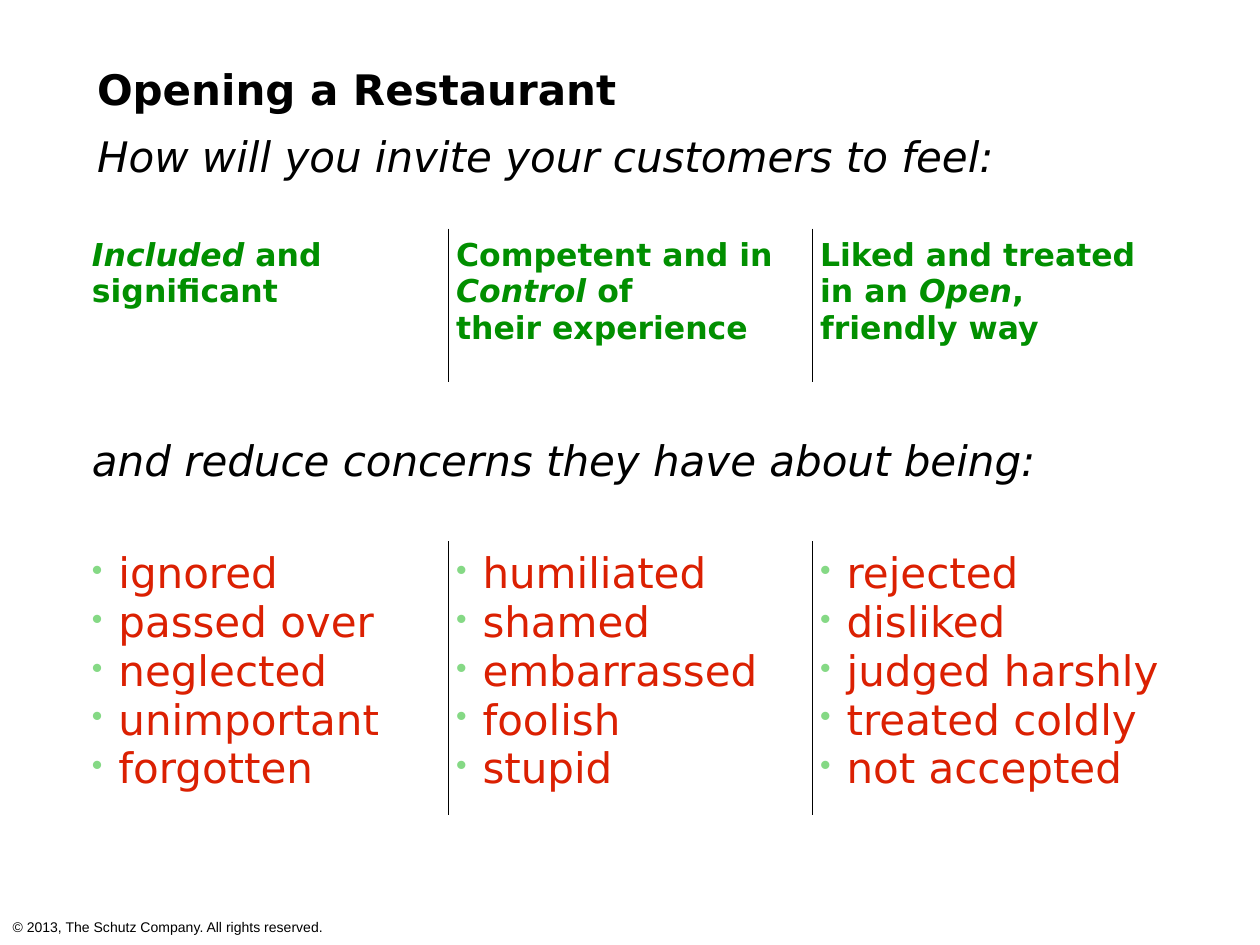
"""Build the slide on how a new restaurant invites its customers to feel."""
from dataclasses import dataclass

from lxml import etree
from pptx import Presentation
from pptx.dml.color import RGBColor
from pptx.enum.text import MSO_ANCHOR
from pptx.oxml.ns import qn
from pptx.util import Inches, Pt

TOP, MIDDLE = MSO_ANCHOR.TOP, MSO_ANCHOR.MIDDLE
BLACK, GREEN, RED, BULLET_GREEN = "000000", "018F00", "DB2002", "85D985"
INSET = 0.06
ROW_HEIGHTS = (1.35, 1.22, 1.26, 2.16)
COLUMN_WIDTH = 2.89

HEADING = {"size": Pt(24), "name": "DejaVu Sans", "bold": True}
QUESTION = {"size": Pt(24), "name": "DejaVu Sans", "bold": False, "italic": True}
FEELING = {"size": Pt(18), "name": "DejaVu Sans", "bold": True}
CONCERN = {"size": Pt(24), "name": "DejaVu Sans", "bold": False}
FOOTER = {"size": Pt(8), "name": "Arial"}


@dataclass
class Column:
    """One column: lines of (text, italic) runs, and the concerns below."""
    feeling: list[list[tuple[str, bool]]]
    concerns: list[str]


COLUMNS = [
    Column([[("Included", True), (" and significant", False)]],
           ["ignored", "passed over", "neglected", "unimportant", "forgotten"]),
    Column([[("Competent and in ", False), ("Control", True), (" of", False)],
            [("their experience", False)]],
           ["humiliated", "shamed", "embarrassed", "foolish", "stupid"]),
    Column([[("Liked and treated in an ", False), ("Open", True), (", friendly way", False)]],
           ["rejected", "disliked", "judged harshly", "treated coldly", "not accepted"]),
]


def color(value: str) -> RGBColor:
    """Turn a hex string into a colour."""
    return RGBColor.from_string(value)


def add_run(paragraph, text: str, format_values: dict, hex_color: str, **extra) -> None:
    """Add a formatted run to a paragraph."""
    run = paragraph.add_run()
    run.text = text
    for attribute, value in {**format_values, **extra}.items():
        setattr(run.font, attribute, value)
    run.font.color.rgb = color(hex_color)


def set_indent(paragraph, left: float, first: float = 0) -> None:
    """Set the left margin and first-line indent in inches."""
    properties = paragraph._p.get_or_add_pPr()
    properties.set("marL", str(Inches(left)))
    properties.set("indent", str(Inches(first)))


def add_bullet(paragraph) -> None:
    """Give a paragraph a small green bullet."""
    set_indent(paragraph, 0.21, -0.21)
    properties = paragraph._p.get_or_add_pPr()
    bullet_color = etree.SubElement(properties, qn("a:buClr"))
    etree.SubElement(bullet_color, qn("a:srgbClr"), val=BULLET_GREEN)
    etree.SubElement(properties, qn("a:buSzPct"), val="75000")
    etree.SubElement(properties, qn("a:buChar"), char="•")


def add_borders(cell, sides: list[str]) -> None:
    """Draw thin black borders on the named sides of a cell."""
    properties = cell._tc.get_or_add_tcPr()
    for side in sides:
        line = etree.SubElement(properties, qn(f"a:ln{side}"), w=str(Pt(1)))
        fill = etree.SubElement(line, qn("a:solidFill"))
        etree.SubElement(fill, qn("a:srgbClr"), val=BLACK)


def set_margins(target) -> None:
    """Apply the common inset to a cell or text frame."""
    for side in ("left", "right", "top", "bottom"):
        setattr(target, f"margin_{side}", Inches(INSET))


def get_paragraph(frame, index: int):
    """Return the first paragraph, or a new one after it."""
    return frame.add_paragraph() if index else frame.paragraphs[0]


def add_feelings_table(slide) -> None:
    """Add the table of feelings to invite and concerns to reduce."""
    table = slide.shapes.add_table(
        len(ROW_HEIGHTS), len(COLUMNS), Inches(0.67), Inches(0.47),
        Inches(COLUMN_WIDTH * len(COLUMNS)), Inches(sum(ROW_HEIGHTS))).table
    table.first_row = table.horz_banding = False
    for table_column in table.columns:
        table_column.width = Inches(COLUMN_WIDTH)
    last = len(COLUMNS) - 1
    for row_index, height in enumerate(ROW_HEIGHTS):
        table.rows[row_index].height = Inches(height)
        for column_index in range(len(COLUMNS)):
            cell = table.cell(row_index, column_index)
            set_margins(cell)
            cell.vertical_anchor = MIDDLE if row_index == 2 else TOP
            if row_index in (1, 3):
                add_borders(cell, ["L"] * (column_index > 0) + ["R"] * (column_index < last))
            cell.fill.background()
    for row_index in (0, 2):
        table.cell(row_index, 0).merge(table.cell(row_index, last))

    title_frame = table.cell(0, 0).text_frame
    titles = [("Opening a Restaurant", HEADING),
              ("How will you invite your customers to feel:", QUESTION)]
    for index, (text, format_values) in enumerate(titles):
        paragraph = get_paragraph(title_frame, index)
        set_indent(paragraph, 0.42, -0.38)
        if index:
            paragraph.space_before = Pt(10)
        add_run(paragraph, text, format_values, BLACK)
    add_run(table.cell(2, 0).text_frame.paragraphs[0],
            "and reduce concerns they have about being:", QUESTION, BLACK)

    for column_index, column in enumerate(COLUMNS):
        feeling_frame = table.cell(1, column_index).text_frame
        for index, runs in enumerate(column.feeling):
            paragraph = get_paragraph(feeling_frame, index)
            for text, italic in runs:
                add_run(paragraph, text, FEELING, GREEN, italic=italic)
        concern_frame = table.cell(3, column_index).text_frame
        for index, concern in enumerate(column.concerns):
            paragraph = get_paragraph(concern_frame, index)
            add_bullet(paragraph)
            add_run(paragraph, concern, CONCERN, RED)


def add_footer(slide) -> None:
    """Add the copyright line at the foot of the slide."""
    frame = slide.shapes.add_textbox(
        Inches(0), Inches(7.23), Inches(10), Inches(0.24)).text_frame
    frame.word_wrap = True
    set_margins(frame)
    set_indent(frame.paragraphs[0], 0.04)
    add_run(frame.paragraphs[0], "© 2013, The Schutz Company. All rights reserved.",
            FOOTER, BLACK)


def main() -> None:
    """Build and save the presentation."""
    presentation = Presentation()
    presentation.slide_width, presentation.slide_height = Inches(10), Inches(7.5)
    slide = presentation.slides.add_slide(presentation.slide_layouts[6])
    add_footer(slide)
    add_feelings_table(slide)
    presentation.save("out.pptx")


if __name__ == "__main__":
    main()
